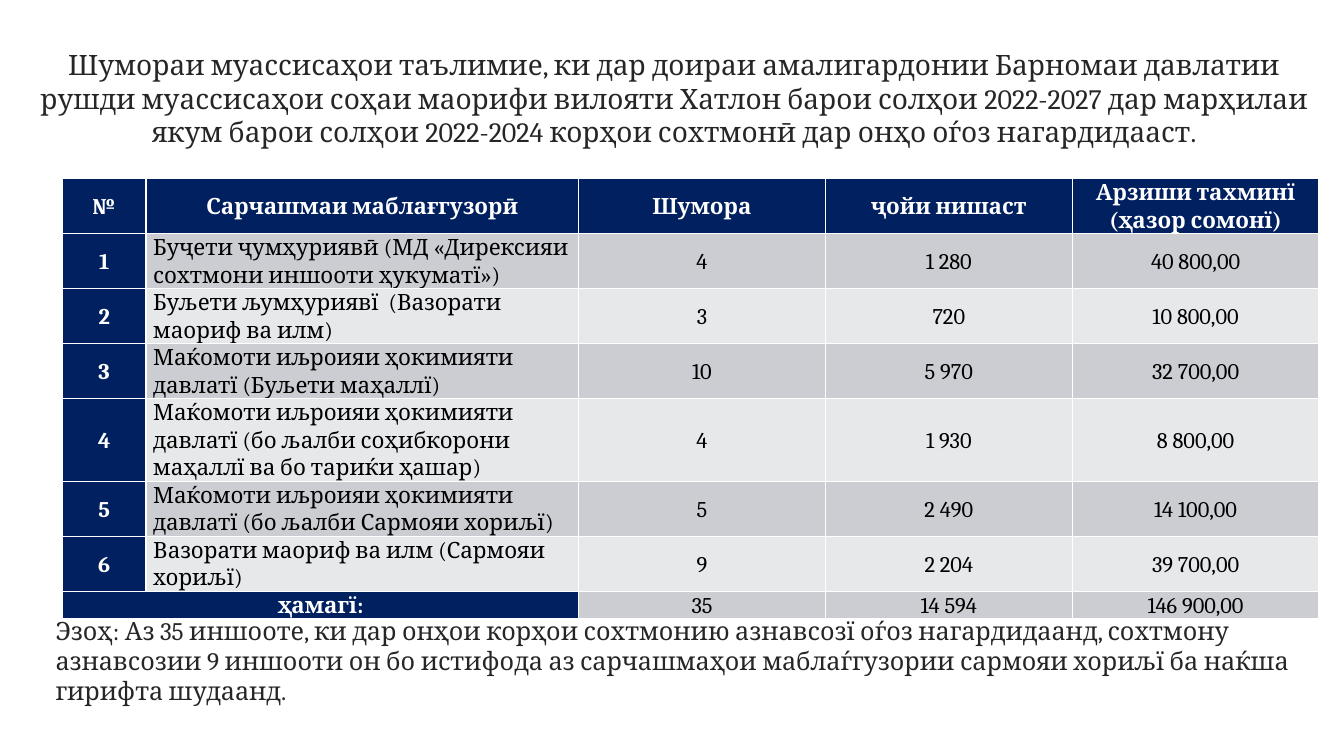
import dataclasses

import pptx
import pptx.dml.color
import pptx.enum.text
import pptx.util

Cm = pptx.util.Cm
Pt = pptx.util.Pt
ALIGN = pptx.enum.text.PP_ALIGN
ANCHOR = pptx.enum.text.MSO_ANCHOR


@dataclasses.dataclass(frozen=True)
class Theme:
    """Colours, font and type sizes of the deck."""
    font: str = "Cambria"
    navy: str = "002060"
    white: str = "FFFFFF"
    black: str = "000000"
    ink: str = "262626"
    bands: tuple = ("CCCDD2", "E7E8EA")
    title_size: int = 20
    note_size: int = 18
    table_size: int = 16


THEME = Theme()
TITLE = (
    "Шумораи муассисаҳои таълимие, ки дар доираи амалигардонии Барномаи давлатии "
    "рушди муассисаҳои соҳаи маорифи вилояти Хатлон барои солҳои 2022-2027 дар марҳилаи "
    "якум барои солҳои 2022-2024 корҳои сохтмонӣ дар онҳо оѓоз нагардидааст."
)
NOTE = (
    "Эзоҳ: Аз 35 иншооте, ки дар онҳои корҳои сохтмонию азнавсозї оѓоз нагардидаанд, сохтмону "
    "азнавсозии 9 иншооти он бо истифода аз сарчашмаҳои маблаѓгузории сармояи хориљї ба наќша "
    "гирифта шудаанд."
)
HEADINGS = ("№", "Сарчашмаи маблағгузорӣ", "Шумора", "ҷойи нишаст", "Арзиши тахминї (ҳазор сомонї)")
SOURCES = (
    ("Буҷети ҷумҳуриявӣ (МД «Дирексияи сохтмони иншооти ҳукуматї»)", "4", "1 280", "40 800,00"),
    ("Буљети љумҳуриявї  (Вазорати маориф ва илм)", "3", "720", "10 800,00"),
    ("Маќомоти иљроияи ҳокимияти давлатї (Буљети маҳаллї)", "10", "5 970", "32 700,00"),
    ("Маќомоти иљроияи ҳокимияти давлатї (бо љалби соҳибкорони маҳаллї ва бо тариќи ҳашар)",
     "4", "1 930", "8 800,00"),
    ("Маќомоти иљроияи ҳокимияти давлатї (бо љалби Сармояи хориљї)", "5", "2 490", "14 100,00"),
    ("Вазорати маориф ва илм (Сармояи хориљї)", "9", "2 204", "39 700,00"),
)
TOTALS = ("ҳамагї:", "", "35", "14 594", "146 900,00")
COLUMN_WIDTHS = (2.11, 10.9, 6.22, 6.22, 6.22)
ROW_LINES = (2, 2, 2, 2, 3, 2, 2, 1)
LINE_HEIGHT = 0.6


def apply_format(target, values):
    """Set each named attribute of the target."""
    for name, value in values.items():
        setattr(target, name, value)


def write_text(frame, text, size, colour, align, spacing=1.0, bold=False):
    """Fill a text frame with one formatted paragraph."""
    para = frame.paragraphs[0]
    apply_format(para, {"alignment": align, "line_spacing": spacing,
                        "space_before": Pt(0), "space_after": Pt(0)})
    span = para.add_run()
    span.text = text
    apply_format(span.font, {"name": THEME.font, "size": Pt(size), "bold": bold})
    span.font.color.rgb = pptx.dml.color.RGBColor.from_string(colour)


def add_title(page, box):
    """Place the heading in the title placeholder."""
    title = page.shapes.title
    apply_format(title, dict(zip(("left", "top", "width", "height"), map(Cm, box))))
    apply_format(title.text_frame, {"word_wrap": True, "vertical_anchor": ANCHOR.BOTTOM,
                                    "auto_size": pptx.enum.text.MSO_AUTO_SIZE.NONE})
    write_text(title.text_frame, TITLE, THEME.title_size, THEME.ink, ALIGN.CENTER)


def add_funding_table(page, box):
    """Place the table of funding sources with its total row."""
    numbered = [(str(number), *source) for number, source in enumerate(SOURCES, 1)]
    rows = [HEADINGS, *numbered, TOTALS]
    last = len(rows) - 1
    table = page.shapes.add_table(len(rows), len(HEADINGS), *map(Cm, box)).table
    apply_format(table, {"first_row": True, "first_col": True, "last_row": True})
    for column, width in zip(table.columns, COLUMN_WIDTHS):
        column.width = Cm(width)
    for row, lines in zip(table.rows, ROW_LINES):
        row.height = Cm(lines * LINE_HEIGHT)
    table.cell(last, 0).merge(table.cell(last, 1))
    for row, texts in enumerate(rows):
        for column, text in enumerate(texts):
            cell = table.cell(row, column)
            heading = row == 0 or column == 0
            fill = THEME.navy if heading else THEME.bands[(row - 1) % 2 if row < last else 0]
            apply_format(cell, {"margin_left": Cm(0.18), "margin_right": Cm(0.18), "margin_top": 0,
                                "margin_bottom": 0, "vertical_anchor": ANCHOR.MIDDLE})
            cell.fill.solid()
            cell.fill.fore_color.rgb = pptx.dml.color.RGBColor.from_string(fill)
            write_text(cell.text_frame, text, THEME.table_size,
                       THEME.white if heading else THEME.black,
                       ALIGN.LEFT if column == 1 and not heading else ALIGN.CENTER,
                       1.07, heading)


def add_note(page, box):
    """Place the explanatory note below the table."""
    frame = page.shapes.add_textbox(*map(Cm, box)).text_frame
    apply_format(frame, {"word_wrap": True, "vertical_anchor": ANCHOR.BOTTOM,
                         "margin_left": Cm(0.94)})
    write_text(frame, NOTE, THEME.note_size, THEME.ink, ALIGN.LEFT)


def main():
    """Build and save the deck."""
    deck = pptx.Presentation()
    apply_format(deck, {"slide_width": Cm(33.87), "slide_height": Cm(19.05)})
    page = deck.slides.add_slide(deck.slide_layouts.get_by_name("Title Only"))
    add_title(page, (0.69, 0.97, 32.59, 2.9))
    add_funding_table(page, (1.57, 4.5, sum(COLUMN_WIDTHS), sum(ROW_LINES) * LINE_HEIGHT))
    add_note(page, (0.46, 16.36, 32.97, 1.55))
    deck.save("out.pptx")


if __name__ == "__main__":
    main()
